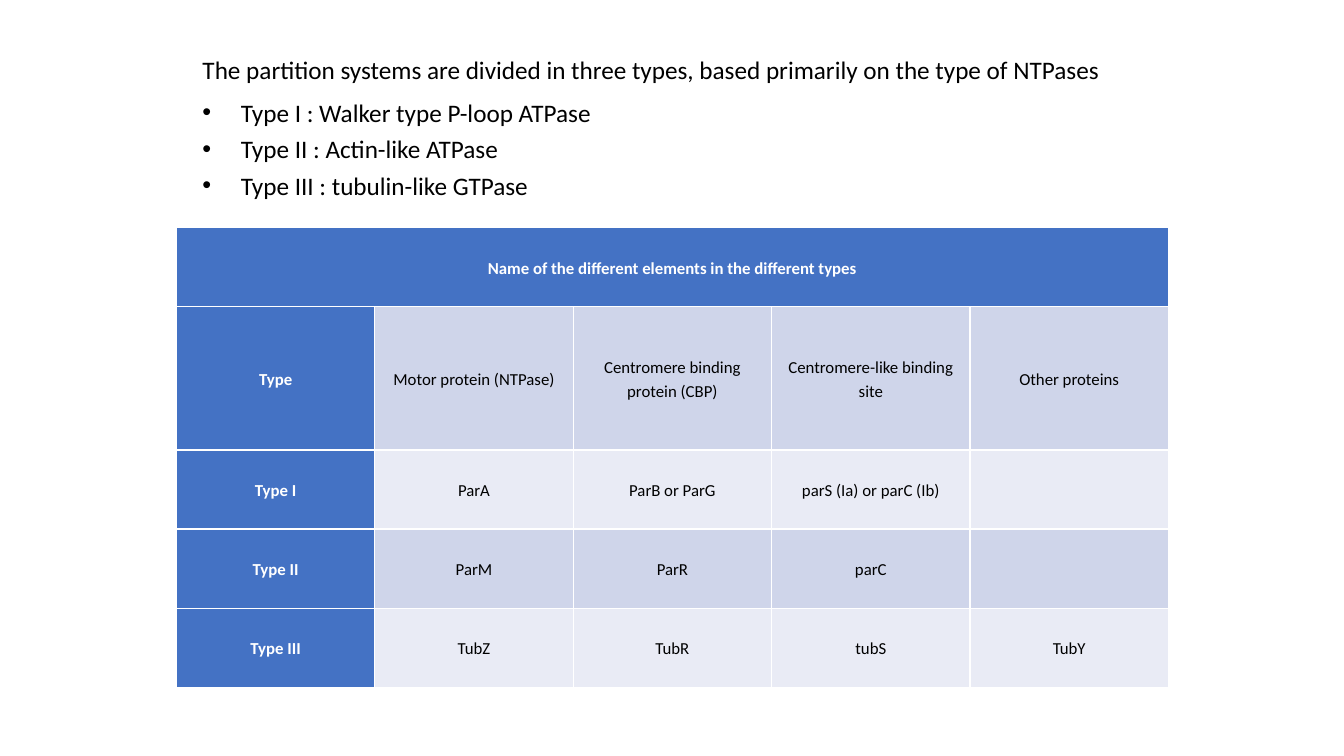
"""Build the slide on the three types of partition systems."""
from dataclasses import dataclass

from lxml import etree
from pptx import Presentation
from pptx import util as u
from pptx.dml import color
from pptx.enum import text
from pptx.oxml import ns

COLOURS = {"ink": "000000", "white": "FFFFFF", "header": "4472C4",
           "band": "CFD5EA", "light": "E9EBF5"}
FONT = "Calibri"
TABLE_WIDTH, TABLE_HEIGHT, TALL_ROW = 9.84, 4.56, 1.42


@dataclass
class IntroLine:
    wording: str
    before: float = 0
    after: float = 1.2
    bullet: bool = True


INTRO = [
    IntroLine("The partition systems are divided in three types, "
              "based primarily on the type of NTPases", 6, 6, False),
    IntroLine("Type I : Walker type P-loop ATPase"),
    IntroLine("Type II : Actin-like ATPase"),
    IntroLine("Type III : tubulin-like GTPase"),
]
ELEMENTS = [
    ["Name of the different elements in the different types", "", "", "", ""],
    ["Type", "Motor protein (NTPase)", "Centromere binding protein (CBP)",
     "Centromere-like binding site", "Other proteins"],
    ["Type I", "ParA", "ParB or ParG", "parS (Ia) or parC (Ib)", ""],
    ["Type II", "ParM", "ParR", "parC", ""],
    ["Type III", "TubZ", "TubR", "tubS", "TubY"],
]


def write(paragraph, wording: str, *, size: float, colour: str = "ink",
          bold: bool = False, before: float = 0, after: float = 0,
          align=text.PP_ALIGN.LEFT) -> None:
    paragraph.alignment = align
    paragraph.line_spacing = 1.15
    paragraph.space_before = u.Pt(before)
    paragraph.space_after = u.Pt(after)
    run = paragraph.add_run()
    run.text = wording
    run.font.name = FONT
    run.font.size = u.Pt(size)
    run.font.bold = bold
    run.font.color.rgb = color.RGBColor.from_string(COLOURS[colour])


def add_bullet(paragraph) -> None:
    properties = paragraph._p.get_or_add_pPr()
    indent = u.Inches(0.38)
    properties.set("marL", str(indent))
    properties.set("indent", str(-indent))
    etree.SubElement(properties, ns.qn("a:buFont"), typeface="Arial")
    etree.SubElement(properties, ns.qn("a:buChar"), char="•")
    tabs = etree.SubElement(properties, ns.qn("a:tabLst"))
    etree.SubElement(tabs, ns.qn("a:tab"), pos=str(u.Inches(0.5)), algn="l")


def add_intro(slide) -> None:
    frame = slide.shapes.add_textbox(
        u.Inches(1.91), u.Inches(0.44), u.Inches(9.51), u.Inches(1.59)).text_frame
    frame.word_wrap = True
    frame.auto_size = text.MSO_AUTO_SIZE.SHAPE_TO_FIT_TEXT
    for index, line in enumerate(INTRO):
        paragraph = frame.add_paragraph() if index else frame.paragraphs[0]
        write(paragraph, line.wording, size=18, before=line.before, after=line.after)
        if line.bullet:
            add_bullet(paragraph)


def fill_cell(cell, wording: str, fill: str, heading: bool) -> None:
    cell.fill.solid()
    cell.fill.fore_color.rgb = color.RGBColor.from_string(COLOURS[fill])
    cell.vertical_anchor = text.MSO_ANCHOR.MIDDLE
    cell.margin_left = cell.margin_right = u.Inches(0.07)
    cell.margin_top = cell.margin_bottom = u.Inches(0.03)
    if wording:
        write(cell.text_frame.paragraphs[0], wording, size=12,
              colour="white" if heading else "ink", bold=heading,
              before=12, after=12, align=text.PP_ALIGN.CENTER)


def add_elements_table(slide) -> None:
    rows, columns = len(ELEMENTS), len(ELEMENTS[0])
    table = slide.shapes.add_table(
        rows, columns, u.Inches(1.75), u.Inches(2.26),
        u.Inches(TABLE_WIDTH), u.Inches(TABLE_HEIGHT)).table
    table.first_col = True
    short_row = (TABLE_HEIGHT - TALL_ROW) / (rows - 1)
    for r, names in enumerate(ELEMENTS):
        table.rows[r].height = u.Inches(TALL_ROW if r == 1 else short_row)
        for c, name in enumerate(names):
            heading = r == 0 or c == 0
            fill = "header" if heading else "band" if r % 2 else "light"
            fill_cell(table.cell(r, c), name, fill, heading)
    table.cell(0, 0).merge(table.cell(0, columns - 1))


def main() -> None:
    deck = Presentation()
    deck.slide_width, deck.slide_height = u.Inches(13.33), u.Inches(7.5)
    slide = deck.slides.add_slide(deck.slide_layouts[6])
    add_intro(slide)
    add_elements_table(slide)
    deck.save("out.pptx")


if __name__ == "__main__":
    main()
